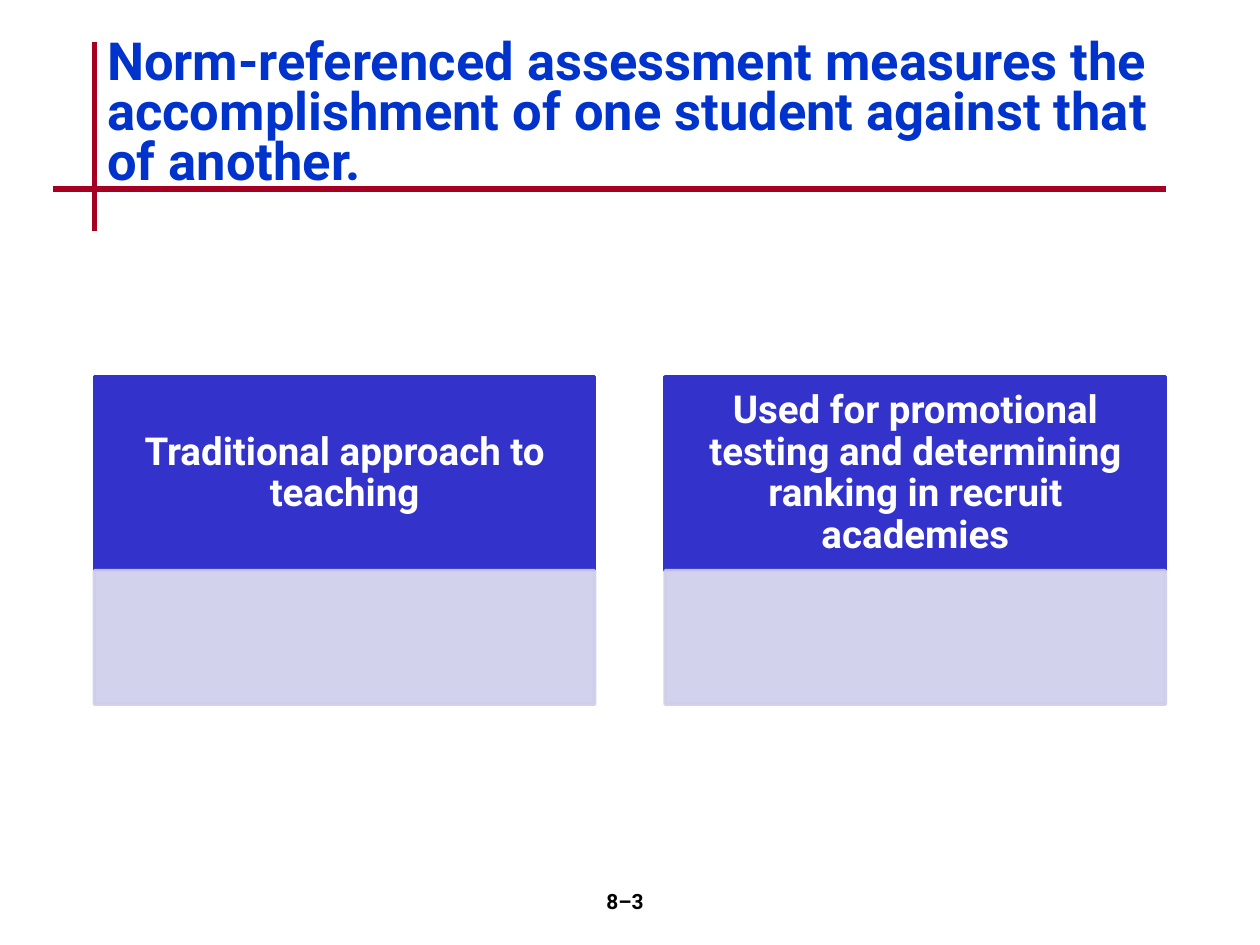
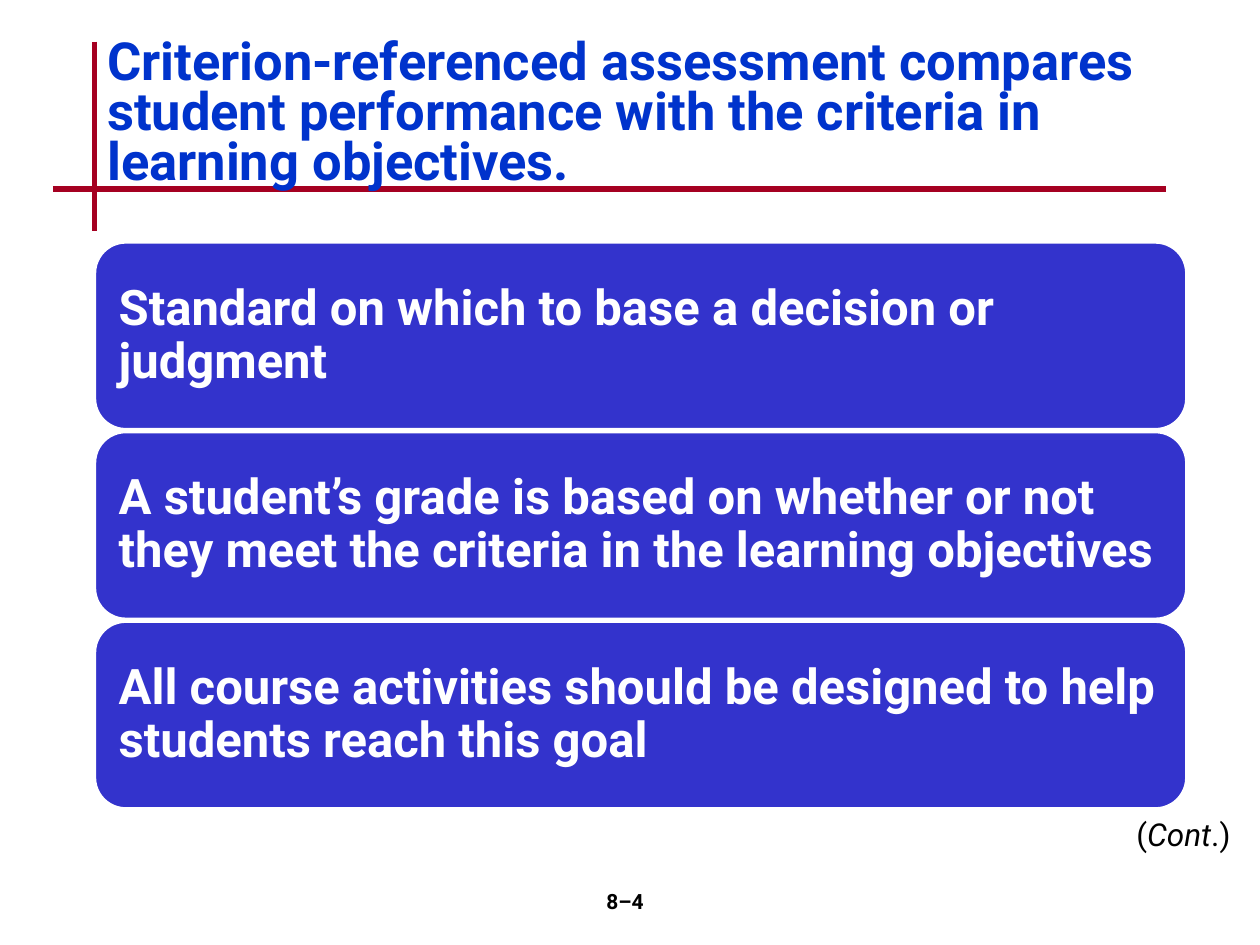
from lxml.etree import SubElement
from pptx import Presentation
from pptx.dml.color import RGBColor
from pptx.enum.shapes import MSO_CONNECTOR, MSO_SHAPE
from pptx.enum.text import MSO_ANCHOR, PP_ALIGN
from pptx.oxml.ns import qn
from pptx.util import Inches, Pt

# Content
SLIDES = [
    {"title": "Norm-referenced assessment measures the accomplishment "
              "of one student against that of another.",
     "cards": ["Traditional approach to teaching",
               "Used for promotional testing and determining ranking "
               "in recruit academies"],
     "page": "8–3"},
    {"title": "Criterion-referenced assessment compares student performance "
              "with the criteria in learning objectives.",
     "bars": ["Standard on which to base a decision or judgment",
              "A student’s grade is based on whether or not they meet "
              "the criteria in the learning objectives",
              "All course activities should be designed to help students "
              "reach this goal"],
     "page": "8–4",
     "more": [("(", False), ("Cont", True), (".)", False)]},
]

# Shared look, lengths in inches
HEX = {"title": "0033CC", "rule": "A50021", "fill": "3333CC",
       "pale": "CECEEC", "white": "FFFFFF", "ink": "000000"}
FONT = "Roboto"
WIDE, HIGH = 10, 7.5
LEFT, SPAN = 0.75, 8.5
RULES = [(LEFT, 0.33, LEFT, 1.83), (0.42, 1.5, LEFT + SPAN, 1.5)]
CARD = {"top": 2.99, "wide": 3.97, "head": 1.54, "foot": 1.06}
BAR = {"top": 1.92, "wide": 8.67, "high": 1.49, "step": 1.505}


def rgb(name):
    return RGBColor.from_string(HEX[name])


def style(para, size, tint, bold=True, align=PP_ALIGN.LEFT, lead=None):
    para.alignment = align
    if lead:
        para.line_spacing = lead
    for run in para.runs:
        font = run.font
        font.name, font.size, font.bold = FONT, Pt(size), bold
        font.color.rgb = rgb(tint)


def block(slide, kind, box, fill, edge):
    shape = slide.shapes.add_shape(kind, *map(Inches, box))
    shape.shadow.inherit = False
    shape.fill.solid()
    shape.fill.fore_color.rgb = rgb(fill)
    shape.line.color.rgb = rgb(edge)
    shape.line.width = Pt(2)
    return shape


def label(shape, text, size, align, side, edge):
    frame = shape.text_frame
    frame.word_wrap = True
    frame.vertical_anchor = MSO_ANCHOR.MIDDLE
    frame.margin_left = frame.margin_right = Inches(side)
    frame.margin_top = frame.margin_bottom = Inches(edge)
    frame.text = text
    style(frame.paragraphs[0], size, "white", align=align, lead=0.9)


def fade(shape, share):
    # Fill and outline share one opacity
    for tint in shape.element.spPr.iter(qn("a:srgbClr")):
        SubElement(tint, qn("a:alpha")).set("val", str(share * 1000))


def base(slide, data):
    # Crossed rules
    for ends in RULES:
        rule = slide.shapes.add_connector(
            MSO_CONNECTOR.STRAIGHT, *map(Inches, ends))
        rule.line.color.rgb = rgb("rule")
        rule.line.width = Pt(3)
        SubElement(rule.element.spPr, qn("a:effectLst"))
    # Title, raised above the rules
    title = slide.shapes.title
    title.left, title.top = Inches(LEFT), Inches(0.25)
    title.width, title.height = Inches(SPAN), Inches(1.33)
    title.text_frame.text = data["title"]
    title.text_frame.vertical_anchor = MSO_ANCHOR.MIDDLE
    style(title.text_frame.paragraphs[0], 30, "title", lead=0.8)
    title.element.getparent().append(title.element)
    # Page number
    page = slide.shapes.add_textbox(
        *map(Inches, (3.92, HIGH - 0.5, 2.08, 0.5))).text_frame
    page.word_wrap = True
    page.text = data["page"]
    style(page.paragraphs[0], 12, "ink", align=PP_ALIGN.CENTER)


def cards(slide, texts):
    step = (SPAN - CARD["wide"]) / (len(texts) - 1)
    for col, text in enumerate(texts):
        left, top, wide = LEFT + col * step, CARD["top"], CARD["wide"]
        head = block(slide, MSO_SHAPE.RECTANGLE,
                     (left, top, wide, CARD["head"]), "fill", "fill")
        label(head, text, 22, PP_ALIGN.CENTER, 0.17, 0.1)
        foot = block(slide, MSO_SHAPE.RECTANGLE,
                     (left, top + CARD["head"], wide, CARD["foot"]),
                     "pale", "pale")
        fade(foot, 90)


def bars(slide, texts):
    for row, text in enumerate(texts):
        box = (LEFT, BAR["top"] + row * BAR["step"], BAR["wide"], BAR["high"])
        bar = block(slide, MSO_SHAPE.ROUNDED_RECTANGLE, box, "fill", "white")
        label(bar, text, 28, PP_ALIGN.LEFT, 0.12, 0.12)


def more(slide, parts):
    frame = slide.shapes.add_textbox(
        *map(Inches, (8.92, 6.42, 0.97, 0.4))).text_frame
    frame.word_wrap = False
    para = frame.paragraphs[0]
    for text, slant in parts:
        run = para.add_run()
        run.text, run.font.italic = text, slant
    style(para, 18, "ink", bold=False)


def main():
    deck = Presentation()
    deck.slide_width, deck.slide_height = Inches(WIDE), Inches(HIGH)
    plan = deck.slide_layouts.get_by_name("Title Only")
    for data in SLIDES:
        slide = deck.slides.add_slide(plan)
        base(slide, data)
        for key, draw in (("cards", cards), ("bars", bars), ("more", more)):
            if key in data:
                draw(slide, data[key])
    deck.save("out.pptx")


if __name__ == "__main__":
    main()
